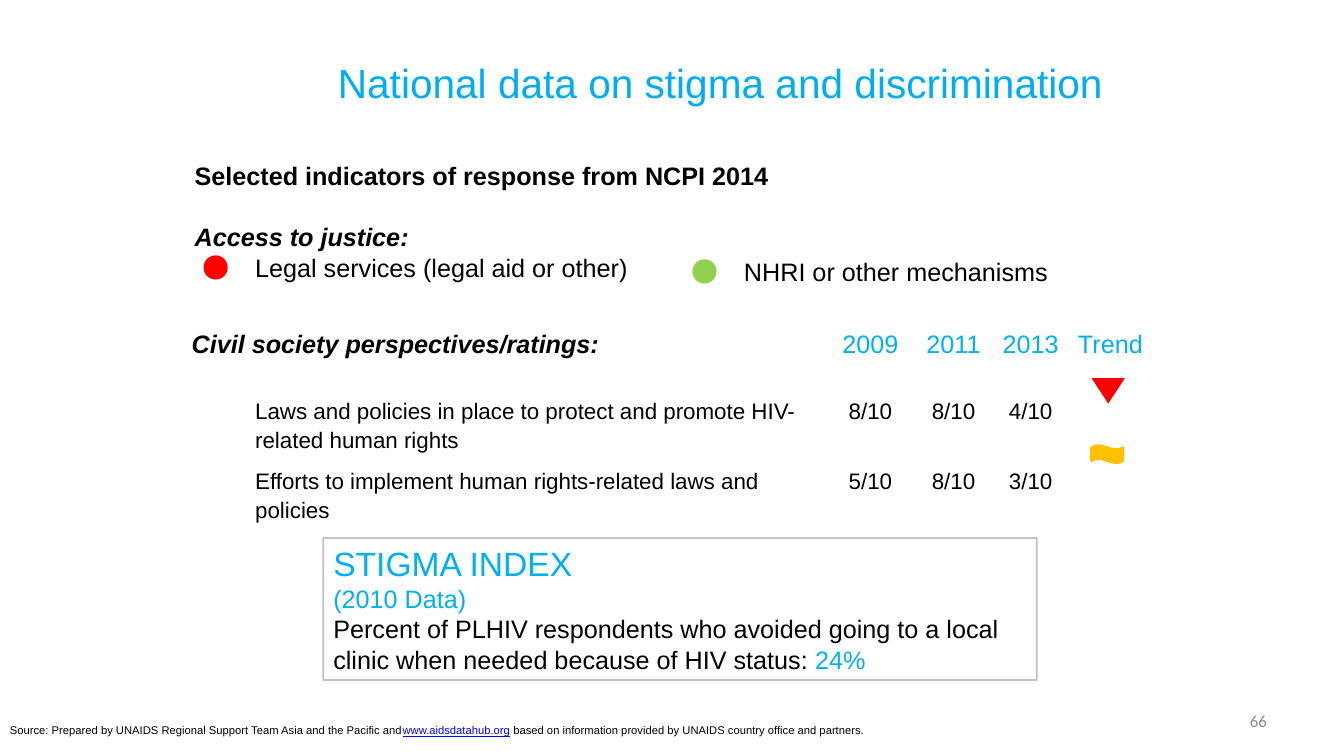
from lxml import etree
from pptx import Presentation
from pptx.dml.color import RGBColor
from pptx.enum.shapes import MSO_SHAPE
from pptx.enum.text import MSO_ANCHOR, MSO_AUTO_SIZE, PP_ALIGN
from pptx.oxml.ns import qn
from pptx.util import Cm, Pt

LEFT, CENTER, RIGHT = PP_ALIGN.LEFT, PP_ALIGN.CENTER, PP_ALIGN.RIGHT
TOP, MIDDLE = MSO_ANCHOR.TOP, MSO_ANCHOR.MIDDLE
OVAL, RECTANGLE = MSO_SHAPE.OVAL, MSO_SHAPE.RECTANGLE
TRIANGLE_DOWN, WAVE = MSO_SHAPE.FLOWCHART_MERGE, MSO_SHAPE.WAVE
NO_AUTOFIT = MSO_AUTO_SIZE.NONE

TITLE_BLUE, BLUE, BLACK = "00AEEF", "00B0F0", "000000"
RED, GREEN, AMBER = "FF0000", "92D050", "FFC000"
GRAY, NUMBER_GRAY, LINK_BLUE = "808080", "8C8C8C", "0000FF"

RATINGS = [
    ["Civil society perspectives/ratings:", "2009", "2011", "2013", "Trend"],
    ["Laws and policies in place to protect and promote HIV-related human rights",
     "8/10", "8/10", "4/10", ""],
    ["Efforts to implement human rights-related laws and policies",
     "5/10", "8/10", "3/10", ""],
]
COLUMN_WIDTHS = [16.13, 2.31, 1.88, 2.01, 2.01]
ROW_HEIGHTS = [1.75, 1.75, 1.55]


def rgb(value):
    """Turn a hex string into a colour."""
    return RGBColor.from_string(value)


def style(span, size, color=BLACK, bold=False, italic=False, font="Arial"):
    """Format one run of text."""
    span.font.name, span.font.size = font, Pt(size)
    span.font.bold, span.font.italic = bold, italic
    span.font.color.rgb = rgb(color)


def fill_paragraph(para, spans, align=LEFT):
    """Add runs given as (text, size, color) to a paragraph."""
    para.alignment = align
    for text, size, color in spans:
        span = para.add_run()
        span.text = text
        style(span, size, color)


def place(shape, box):
    """Move a shape to a box given in centimetres."""
    shape.left, shape.top, shape.width, shape.height = map(Cm, box)


def add_text(page, box, anchor=TOP):
    """Add a wrapping text box and return its frame."""
    frame = page.shapes.add_textbox(*map(Cm, box)).text_frame
    frame.word_wrap = True
    frame.vertical_anchor = anchor
    return frame


def add_mark(page, kind, box, color):
    """Add a plain filled shape."""
    mark = page.shapes.add_shape(kind, *map(Cm, box))
    mark.shadow.inherit = False
    mark.fill.solid()
    mark.fill.fore_color.rgb = rgb(color)
    mark.line.fill.background()
    return mark


def add_title(page, box):
    """Fill the title placeholder."""
    title = page.shapes.title
    place(title, box)
    frame = title.text_frame
    frame.text = "National data on stigma and discrimination"
    frame.auto_size = NO_AUTOFIT
    frame.vertical_anchor = TOP
    frame.paragraphs[0].alignment = LEFT
    style(frame.paragraphs[0].runs[0], 29, TITLE_BLUE)


def add_headings(page, box):
    """Fill the body placeholder with the two headings."""
    body = page.placeholders[1]
    place(body, box)
    frame = body.text_frame
    frame.text = "Selected indicators of response from NCPI 2014\nAccess to justice:"
    frame.auto_size = NO_AUTOFIT
    for index, para in enumerate(frame.paragraphs):
        para.line_spacing = Pt(22)
        para.space_before = Pt(22 * index)
        properties = para._p.get_or_add_pPr()
        properties.set("marL", "0")
        properties.set("indent", "0")
        etree.SubElement(properties, qn("a:buNone"))
        style(para.runs[0], 18, bold=True, italic=index == 1)


def add_status(page, box, text, color):
    """Add a status dot at the left of the box and its label."""
    left, top, width, height = box
    size = 0.61
    add_mark(page, OVAL, (left, top + (height - size) / 2, size, size), color)
    frame = add_text(page, (left + 1.05, top, width - 1.05, height), MIDDLE)
    fill_paragraph(frame.paragraphs[0], [(text, 18, BLACK)])


def add_ratings(page, box):
    """Add the ratings table with its trend marks."""
    left, top = box[:2]
    table = page.shapes.add_table(
        len(RATINGS), len(COLUMN_WIDTHS), *map(Cm, box)).table
    table.first_row = table.horz_banding = False
    for column, width in zip(table.columns, COLUMN_WIDTHS):
        column.width = Cm(width)
    for row, height in zip(table.rows, ROW_HEIGHTS):
        row.height = Cm(height)
    for i, values in enumerate(RATINGS):
        for j, value in enumerate(values):
            cell = table.cell(i, j)
            cell.fill.background()
            cell.margin_top = cell.margin_bottom = 0
            cell.margin_left = Cm(1.78 if i and not j else 0.18)
            cell.margin_right = Cm(0.18)
            para = cell.text_frame.paragraphs[0]
            para.line_spacing = 1.15
            color = BLUE if j and not i else BLACK
            fill_paragraph(para, [(value, 16 if i else 18, color)] if value else [],
                           CENTER if j else LEFT)
    heading = table.cell(0, 0).text_frame.paragraphs[0].runs[0]
    style(heading, 18, bold=True, italic=True)
    add_mark(page, TRIANGLE_DOWN, (left + 22.86, top + 1.3, 0.84, 0.64), RED)
    wave = add_mark(page, WAVE, (left + 22.86, top + 3, 0.79, 0.43), AMBER)
    wave.line.color.rgb = rgb(AMBER)
    wave.line.width = Pt(2)


def add_stigma_index(page, box):
    """Add the framed stigma index."""
    panel = page.shapes.add_shape(RECTANGLE, *map(Cm, box))
    panel.shadow.inherit = False
    panel.fill.background()
    panel.line.color.rgb = rgb(GRAY)
    panel.line.width = Pt(1.25)
    shade = panel.line._ln.find(".//" + qn("a:srgbClr"))
    etree.SubElement(shade, qn("a:alpha"), val="48000")
    frame = panel.text_frame
    frame.word_wrap = True
    frame.vertical_anchor = TOP
    lines = [
        [("STIGMA INDEX", 24, BLUE)],
        [("(2010 Data)", 18, BLUE)],
        [("Percent of PLHIV respondents who avoided going to a local clinic "
          "when needed because of HIV status: ", 18, BLACK), ("24%", 18, BLUE)],
    ]
    for index, spans in enumerate(lines):
        para = frame.add_paragraph() if index else frame.paragraphs[0]
        fill_paragraph(para, spans)


def add_footer(page, source_box, number_box):
    """Add the source line and the page number."""
    source = add_text(page, source_box).paragraphs[0]
    fill_paragraph(source, [
        ("Source: Prepared by UNAIDS Regional Support Team Asia and the Pacific and",
         8, BLACK),
        ("www.aidsdatahub.org", 8, LINK_BLUE),
        (" based on information provided by UNAIDS country office and partners.",
         8, BLACK),
    ])
    source.runs[1].font.underline = True
    number = add_text(page, number_box, MIDDLE).paragraphs[0]
    fill_paragraph(number, [("66", 12, NUMBER_GRAY)], RIGHT)
    number.runs[0].font.name = "Calibri"


def main():
    """Build the deck and save it."""
    deck = Presentation()
    deck.slide_width, deck.slide_height = Cm(33.87), Cm(19.05)
    page = deck.slides.add_slide(deck.slide_layouts[1])
    add_title(page, (8.26, 1.32, 20.75, 1.5))
    add_headings(page, (4.65, 3.89, 24.97, 2.6))
    add_status(page, (5.13, 6.23, 12, 1.02), "Legal services (legal aid or other)", RED)
    add_status(page, (17.45, 6.33, 12, 1.02), "NHRI or other mechanisms", GREEN)
    add_ratings(page, (4.65, 8.23, sum(COLUMN_WIDTHS), sum(ROW_HEIGHTS)))
    add_stigma_index(page, (8.15, 13.56, 17.98, 3.58))
    add_footer(page, (0, 18.11, 22.43, 0.61), (24.28, 17.65, 7.9, 1.02))
    deck.save("out.pptx")


if __name__ == "__main__":
    main()
